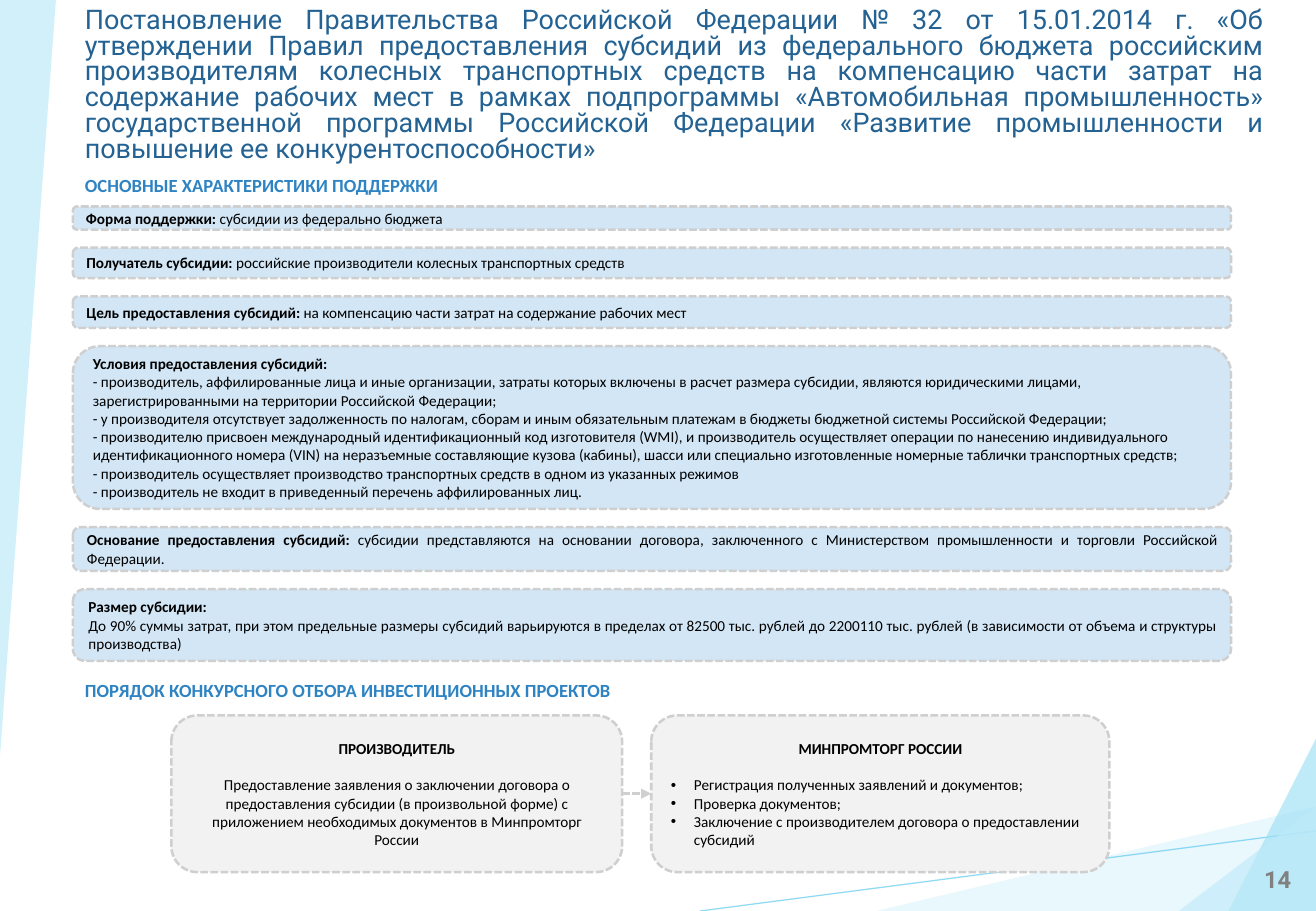
from lxml import etree
from pptx import Presentation
from pptx.dml.color import RGBColor
from pptx.enum.dml import MSO_LINE
from pptx.enum.shapes import MSO_CONNECTOR, MSO_SHAPE
from pptx.enum.text import MSO_ANCHOR, PP_ALIGN
from pptx.oxml.ns import qn
from pptx.util import Inches, Pt

LEFT, CENTER, JUSTIFY = PP_ALIGN.LEFT, PP_ALIGN.CENTER, PP_ALIGN.JUSTIFY
MIDDLE = MSO_ANCHOR.MIDDLE
ROUNDED, TRIANGLE = MSO_SHAPE.ROUNDED_RECTANGLE, MSO_SHAPE.RIGHT_TRIANGLE
TRIANGLE = MSO_SHAPE.ISOSCELES_TRIANGLE
STRAIGHT = MSO_CONNECTOR.STRAIGHT
DASH = MSO_LINE.SQUARE_DOT

THEME = {
    "title": ("Roboto", 16, "236292"),
    "number": ("Roboto", 14, "808080"),
    "heading": ("Calibri", 11, "2E83C3"),
    "body": ("Calibri", 9, "000000"),
    "band": "D3E6F5",
    "card": "F2F2F2",
    "border": "CFCFCF",
    "ray": "5FCBEF",
    "sail": "BFEAF9",
    "wide": "DFF5FC",
    "tall": "9FE0F5",
}

prs = Presentation()
prs.slide_width, prs.slide_height = Inches(10.83), Inches(7.5)
COL, ROW = prs.slide_width / 100, prs.slide_height / 100
s = prs.slides.add_slide(prs.slide_layouts[6])


def area(x, y, w, h):
    return round(x * COL), round(y * ROW), round(w * COL), round(h * ROW)


def write(tf, style, paragraphs, align):
    font, size, color = THEME[style]
    tf.word_wrap = True
    for i, (strong, plain) in enumerate(paragraphs):
        p = tf.paragraphs[0] if i == 0 else tf.add_paragraph()
        p.alignment = align
        for text, bold in ((strong, True), (plain, False)):
            if text:
                r = p.add_run()
                r.text = text
                r.font.name, r.font.size, r.font.bold = font, Pt(size), bold
                r.font.color.rgb = RGBColor.from_string(color)


wide = s.shapes.add_shape(TRIANGLE, *area(66.57, 88.53, 33.43, 11.47))
outline = s.shapes.build_freeform(0, 0, scale=1.0)
outline.add_line_segments([area(4.25, 0, 0, 0)[:2], area(0, 82.93, 0, 0)[:2]])
sail = outline.convert_to_shape()
ray = s.shapes.add_connector(STRAIGHT, *area(100, 91.2, 53.19, 100))
ray.line.width = Pt(0.75)
ray.line.color.rgb = RGBColor.from_string(THEME["ray"])
tall = s.shapes.add_shape(TRIANGLE, *area(93.35, 81.07, 6.65, 18.93))
low = s.shapes.add_shape(TRIANGLE, *area(89.57, 88.53, 10.43, 11.47))

for sp, color in ((wide, "wide"), (sail, "sail"), (tall, "tall"), (low, "sail")):
    sp.shadow.inherit = False
    sp.fill.solid()
    sp.fill.fore_color.rgb = RGBColor.from_string(THEME[color])
    sp.line.fill.background()
for sp in (wide, tall, low):
    sp.adjustments[0] = 1
for sp, opacity in ((wide, 66), (sail, 70), (ray, 70), (tall, 66), (low, 66)):
    tint = sp._element.spPr.find(".//" + qn("a:srgbClr"))
    etree.SubElement(tint, qn("a:alpha")).set("val", str(opacity * 1000))

MARGIN, WIDTH = 5.54, 88
TITLE = (
    "Постановление Правительства Российской Федерации № 32 от 15.01.2014 г. "
    "«Об утверждении Правил предоставления субсидий из федерального бюджета "
    "российским производителям колесных транспортных средств на компенсацию "
    "части затрат на содержание рабочих мест в рамках подпрограммы "
    "«Автомобильная промышленность» государственной программы Российской "
    "Федерации «Развитие промышленности и повышение ее конкурентоспособности»"
)
labels = [
    ("title", (MARGIN, 0.27, 91.41, 8.27), ("", TITLE), JUSTIFY),
    ("number", (94.92, 94.27, 4.34, 4.53), ("14", ""), CENTER),
    ("heading", (MARGIN, 18.4, WIDTH, 3.73),
     ("ОСНОВНЫЕ ХАРАКТЕРИСТИКИ ПОДДЕРЖКИ", ""), LEFT),
    ("heading", (MARGIN, 73.87, WIDTH, 3.73),
     ("ПОРЯДОК КОНКУРСНОГО ОТБОРА ИНВЕСТИЦИОННЫХ ПРОЕКТОВ", ""), LEFT),
]
for style, place, text, align in labels:
    tf = s.shapes.add_textbox(*area(*place)).text_frame
    write(tf, style, [text], align)
    if style == "title":
        tf.paragraphs[0].line_spacing = 0.8

bands = [
    (2.53, JUSTIFY, [("Форма поддержки: ", "субсидии из федерально бюджета")]),
    (3.33, LEFT, [("Получатель субсидии: ",
                   "российские производители колесных транспортных средств")]),
    (3.47, JUSTIFY, [("Цель предоставления субсидий: ",
                      "на компенсацию части затрат на содержание рабочих мест")]),
    (17.87, LEFT, [
        ("Условия предоставления субсидий:", ""),
        ("", "- производитель, аффилированные лица и иные организации, затраты "
             "которых включены в расчет размера субсидии, являются юридическими "
             "лицами, зарегистрированными на территории Российской Федерации;"),
        ("", "- у производителя отсутствует задолженность по налогам, сборам и "
             "иным обязательным платежам в бюджеты бюджетной системы Российской "
             "Федерации;"),
        ("", "- производителю присвоен международный идентификационный код "
             "изготовителя (WMI), и производитель осуществляет операции по "
             "нанесению индивидуального идентификационного номера (VIN) на "
             "неразъемные составляющие кузова (кабины), шасси или специально "
             "изготовленные номерные таблички транспортных средств;"),
        ("", "- производитель осуществляет производство транспортных средств в "
             "одном из указанных режимов"),
        ("", "- производитель не входит в приведенный перечень аффилированных лиц."),
    ]),
    (4.8, JUSTIFY, [("Основание предоставления субсидий: ",
                     "субсидии представляются на основании договора, заключенного "
                     "с Министерством промышленности и торговли Российской "
                     "Федерации.")]),
    (7.87, JUSTIFY, [
        ("Размер субсидии:", ""),
        ("", "До 90% суммы затрат, при этом предельные размеры субсидий "
             "варьируются в пределах от 82500 тыс. рублей до 2200110 тыс. рублей "
             "(в зависимости от объема и структуры производства)"),
    ]),
]
boxes = []
top, GAP = 22.67, 2
for height, align, text in bands:
    boxes.append(("band", (MARGIN, top, WIDTH, height), align, text))
    top += height + GAP

CARD_TOP, CARD_HEIGHT = 78.53, 17.2
boxes += [
    ("card", (13.02, CARD_TOP, 34.26, CARD_HEIGHT), CENTER, [
        ("ПРОИЗВОДИТЕЛЬ", ""),
        ("", "Предоставление заявления о заключении договора о предоставления "
             "субсидии (в произвольной форме) с приложением необходимых "
             "документов в Минпромторг России"),
    ]),
    ("card", (49.49, CARD_TOP, 34.81, CARD_HEIGHT), LEFT, [
        ("МИНПРОМТОРГ РОССИИ", ""),
        ("", "Регистрация полученных заявлений и документов;"),
        ("", "Проверка документов;"),
        ("", "Заключение с производителем договора о предоставлении субсидий"),
    ]),
]
cards = []
for kind, place, align, text in boxes:
    sp = s.shapes.add_shape(ROUNDED, *area(*place))
    sp.shadow.inherit = False
    sp.fill.solid()
    sp.fill.fore_color.rgb = RGBColor.from_string(THEME[kind])
    sp.line.color.rgb = RGBColor.from_string(THEME["border"])
    sp.line.width, sp.line.dash_style = Pt(1.5), DASH
    sp.text_frame.vertical_anchor = MIDDLE
    write(sp.text_frame, "body", text, align)
    if kind == "card":
        heading = sp.text_frame.paragraphs[0]
        heading.alignment, heading.space_after = CENTER, Pt(11)
        cards.append(sp)

producer, ministry = cards
for p in ministry.text_frame.paragraphs[1:]:
    pPr = p._p.get_or_add_pPr()
    pPr.set("marL", str(Inches(0.19)))
    pPr.set("indent", str(-Inches(0.19)))
    etree.SubElement(pPr, qn("a:buFont")).set("typeface", "Arial")
    etree.SubElement(pPr, qn("a:buChar")).set("char", "•")

arrow = s.shapes.add_connector(STRAIGHT, 0, 0, 0, 0)
arrow.begin_connect(producer, 3)
arrow.end_connect(ministry, 1)
arrow.line.color.rgb = RGBColor.from_string(THEME["border"])
arrow.line.width, arrow.line.dash_style = Pt(1.5), DASH
etree.SubElement(arrow.line._get_or_add_ln(), qn("a:tailEnd")).set("type", "triangle")
for line in (ray, arrow):
    etree.SubElement(line._element.spPr, qn("a:effectLst"))

prs.save("out.pptx")
